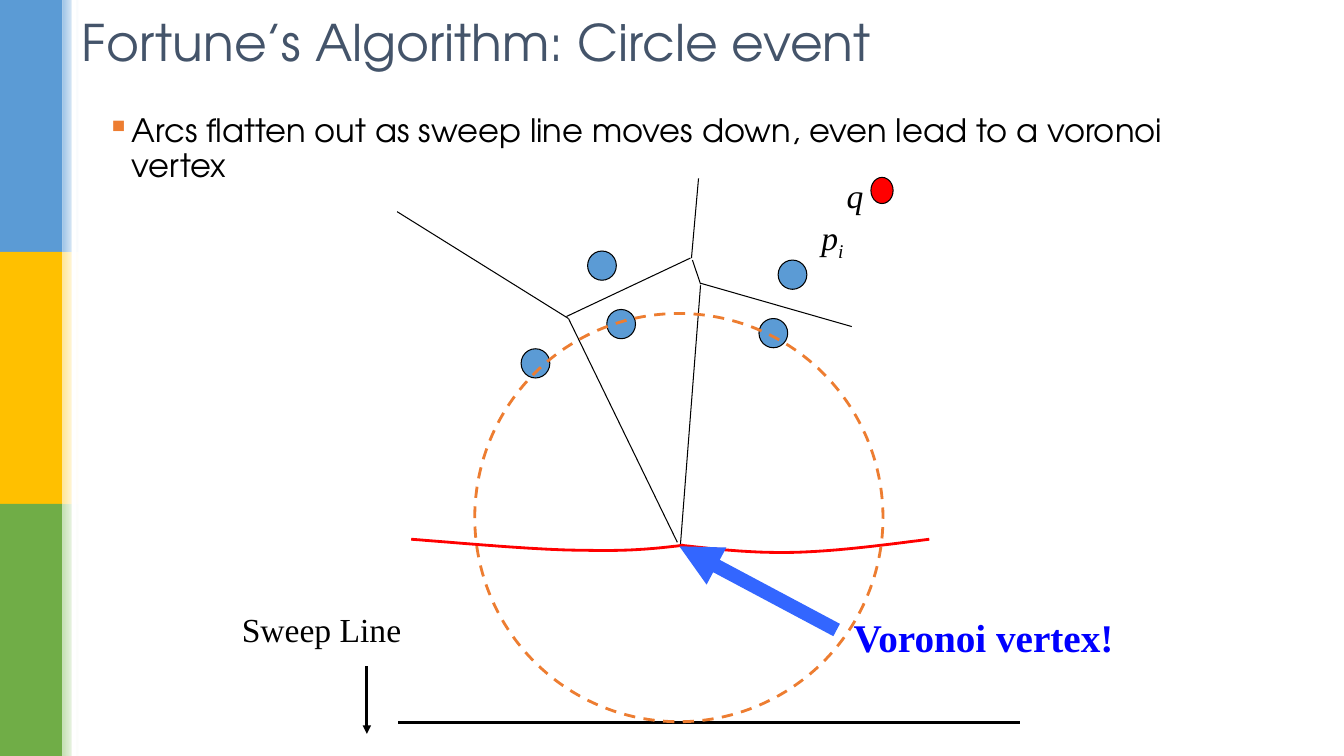
from lxml.etree import SubElement
from pptx import Presentation
from pptx.dml.color import RGBColor
from pptx.enum.dml import MSO_LINE
from pptx.enum.shapes import MSO_CONNECTOR, MSO_SHAPE
from pptx.enum.text import MSO_ANCHOR, MSO_AUTO_SIZE, PP_ALIGN
from pptx.oxml.ns import qn
from pptx.util import Inches, Pt

BLACK = RGBColor(0x00, 0x00, 0x00)
WHITE = RGBColor(0xFF, 0xFF, 0xFF)
SLATE = RGBColor(0x44, 0x54, 0x6A)
ORANGE = RGBColor(0xED, 0x7D, 0x31)
RED = RGBColor(0xFF, 0x00, 0x00)
SITE_BLUE = RGBColor(0x5B, 0x9B, 0xD5)
LABEL_BLUE = RGBColor(0x00, 0x00, 0xFF)
ARROW_BLUE = RGBColor(0x33, 0x66, 0xFF)
BANDS = [
    (SITE_BLUE, RGBColor(0x9D, 0xC3, 0xE6)),
    (RGBColor(0xFF, 0xC0, 0x00), RGBColor(0xFF, 0xE6, 0x99)),
    (RGBColor(0x70, 0xAD, 0x47), RGBColor(0xC5, 0xE0, 0xB4)),
]

CELL = Inches(0.1)  # side of one grid cell
COLS, ROWS = 400 / 3, 75


def grid(*cells):
    return [round(cell * CELL) for cell in cells]


def bezier(start, first, second, end, steps=24):
    """Points along a cubic curve, both ends included."""
    for step in range(steps + 1):
        t = step / steps
        weights = ((1 - t) ** 3, 3 * t * (1 - t) ** 2, 3 * t * t * (1 - t), t ** 3)
        yield tuple(sum(w * point[axis] for w, point in zip(weights, (start, first, second, end)))
                    for axis in (0, 1))


class SlideSketch:
    heading_font = "TeX Gyre Adventor"
    label_font = "Times New Roman"

    def __init__(self, deck):
        self.slide = deck.slides.add_slide(deck.slide_layouts[5])
        self.shapes = self.slide.shapes

    def style(self, run, font, size, color, bold=False, italic=False):
        run.font.name, run.font.size = font, Pt(size)
        run.font.bold, run.font.italic = bold, italic
        run.font.color.rgb = color

    def title(self, text, *box):
        title = self.shapes.title
        title.left, title.top, title.width, title.height = grid(*box)
        frame = title.text_frame
        frame.text = text
        frame.auto_size = MSO_AUTO_SIZE.NONE
        frame.vertical_anchor = MSO_ANCHOR.MIDDLE
        frame.paragraphs[0].alignment = PP_ALIGN.LEFT
        self.style(frame.paragraphs[0].runs[0], self.heading_font, 36, SLATE)

    def bullet(self, text, *box):
        frame = self.shapes.add_textbox(*grid(*box)).text_frame
        frame.word_wrap = True
        frame.text = text
        point = frame.paragraphs[0]
        point.line_spacing = 0.9
        props = point._p.get_or_add_pPr()
        props.set("marL", str(Inches(0.25)))
        props.set("indent", str(-Inches(0.25)))
        bullet_color = SubElement(props, qn("a:buClr"))
        SubElement(bullet_color, qn("a:srgbClr")).set("val", str(ORANGE))
        SubElement(props, qn("a:buChar")).set("char", "▪")
        self.style(point.runs[0], self.heading_font, 23, BLACK)

    def label(self, text, *box, size=24, color=BLACK, bold=False, italic=False, subscript=""):
        frame = self.shapes.add_textbox(*grid(*box)).text_frame
        frame.word_wrap = False
        frame.auto_size = MSO_AUTO_SIZE.SHAPE_TO_FIT_TEXT
        frame.text = text
        words = frame.paragraphs[0]
        if subscript:
            index = words.add_run()
            index.text = subscript
            index._r.get_or_add_rPr().set("baseline", "-25000")
        for run in words.runs:
            self.style(run, self.label_font, size, color, bold, italic)

    def block(self, fill, *box, fade_to=None):
        block = self.shapes.add_shape(MSO_SHAPE.RECTANGLE, *grid(*box))
        block.shadow.inherit = False
        block.line.fill.background()
        if fade_to is None:
            block.fill.solid()
            block.fill.fore_color.rgb = fill
        else:
            block.fill.gradient()
            block.fill.gradient_angle = 0
            for stop, color, position in zip(block.fill.gradient_stops, (fill, fade_to), (0, 1)):
                stop.color.rgb, stop.position = color, position

    def oval(self, *box, fill=None, line=BLACK, weight=0.75, dash=None):
        oval = self.shapes.add_shape(MSO_SHAPE.OVAL, *grid(*box))
        oval.shadow.inherit = False
        if fill is None:
            oval.fill.background()
        else:
            oval.fill.solid()
            oval.fill.fore_color.rgb = fill
        oval.line.color.rgb, oval.line.width = line, Pt(weight)
        if dash:
            oval.line.dash_style = dash

    def line(self, start, end, color=BLACK, weight=0.75, arrow=False):
        line = self.shapes.add_connector(MSO_CONNECTOR.STRAIGHT, *grid(*start, *end))
        line.line.color.rgb, line.line.width = color, Pt(weight)
        if arrow:
            SubElement(line.line._get_or_add_ln(), qn("a:tailEnd")).set("type", "triangle")
        SubElement(line._element.spPr, qn("a:effectLst"))

    def curve(self, points, color, weight):
        start, *rest = [grid(*point) for point in points]
        builder = self.shapes.build_freeform(*start)
        builder.add_line_segments(rest, close=False)
        curve = builder.convert_to_shape()
        curve.shadow.inherit = False
        curve.fill.background()
        curve.line.color.rgb, curve.line.width = color, Pt(weight)


def main():
    deck = Presentation()
    deck.slide_width, deck.slide_height = grid(COLS, ROWS)
    sketch = SlideSketch(deck)

    # Side bands with a fading edge
    band_height = ROWS / len(BANDS)
    for row, (strong, pale) in enumerate(BANDS):
        sketch.block(strong, 0, row * band_height, 6.2, band_height)
        sketch.block(pale, 6.2, row * band_height, 1.6, band_height, fade_to=WHITE)
    sketch.block(WHITE, 7.1, 0, 0.5, ROWS)

    # Heading and statement
    sketch.title("Fortune’s Algorithm: Circle event", 7.1, 0, 104.8, 8.3)
    sketch.bullet("Arcs flatten out as sweep line moves down, even lead to a voronoi vertex",
                  9.6, 10.9, 111.8, 13.6)

    # Sweep line and its direction
    sketch.line((39.5, 71.7), (101.2, 71.7), weight=2)
    sketch.line((36.4, 66.1), (36.4, 72.8), weight=2, arrow=True)

    # Voronoi edges
    for start, end in [
        ((69.5, 28.2), (68.7, 25.8)),
        ((39.4, 21), (56.4, 31.6)),
        ((56.4, 31.6), (67.2, 53.8)),
        ((67.5, 54.1), (69.5, 28.3)),
        ((56.2, 31.4), (68.5, 25.6)),
        ((69.5, 28.1), (84.5, 32.4)),
        ((68.6, 25.6), (69.3, 17.7)),
    ]:
        sketch.line(start, end)

    # Sites
    for left, top in [(75.3, 31.6), (77.2, 25.8), (51.7, 34.6), (60.2, 30.7), (58.3, 24.9)]:
        sketch.oval(left, top, 2.85, 2.9, fill=SITE_BLUE)
    sketch.label("p", 80.5, 21, 4.3, 5, italic=True, subscript="i")
    sketch.label("q", 83, 16.9, 3.7, 5, italic=True)
    sketch.oval(86.4, 17.6, 2.2, 2.6, fill=RED)

    # Beach line: each arc is two curves that share a point
    for start, *pieces in [
        ((67.6, 54.1), ((71.1, 54.5), (74.7, 54.9), (78.8, 54.8)),
         ((82.9, 54.7), (87.5, 54.1), (92.2, 53.5))),
        ((40.8, 53.5), ((47.2, 54), (53.7, 54.6), (58.2, 54.6)),
         ((62.7, 54.7), (65.2, 54.4), (67.8, 54.1))),
    ]:
        arc = [start]
        for piece in pieces:
            arc += list(bezier(arc[-1], *piece))[1:]
        sketch.curve(arc, RED, 2)

    # Circle touching the sweep line
    sketch.oval(47.1, 31.1, 40.5, 40.5, line=ORANGE, weight=2, dash=MSO_LINE.DASH)

    # Callouts
    sketch.label("Voronoi vertex!", 83.7, 60.4, 28.2, 5.7, size=28, color=LABEL_BLUE, bold=True)
    sketch.line((83, 62.5), (67.4, 54.2), ARROW_BLUE, 10, arrow=True)
    sketch.label("Sweep Line", 23, 59.9, 17.8, 5)

    deck.save("out.pptx")


if __name__ == "__main__":
    main()
